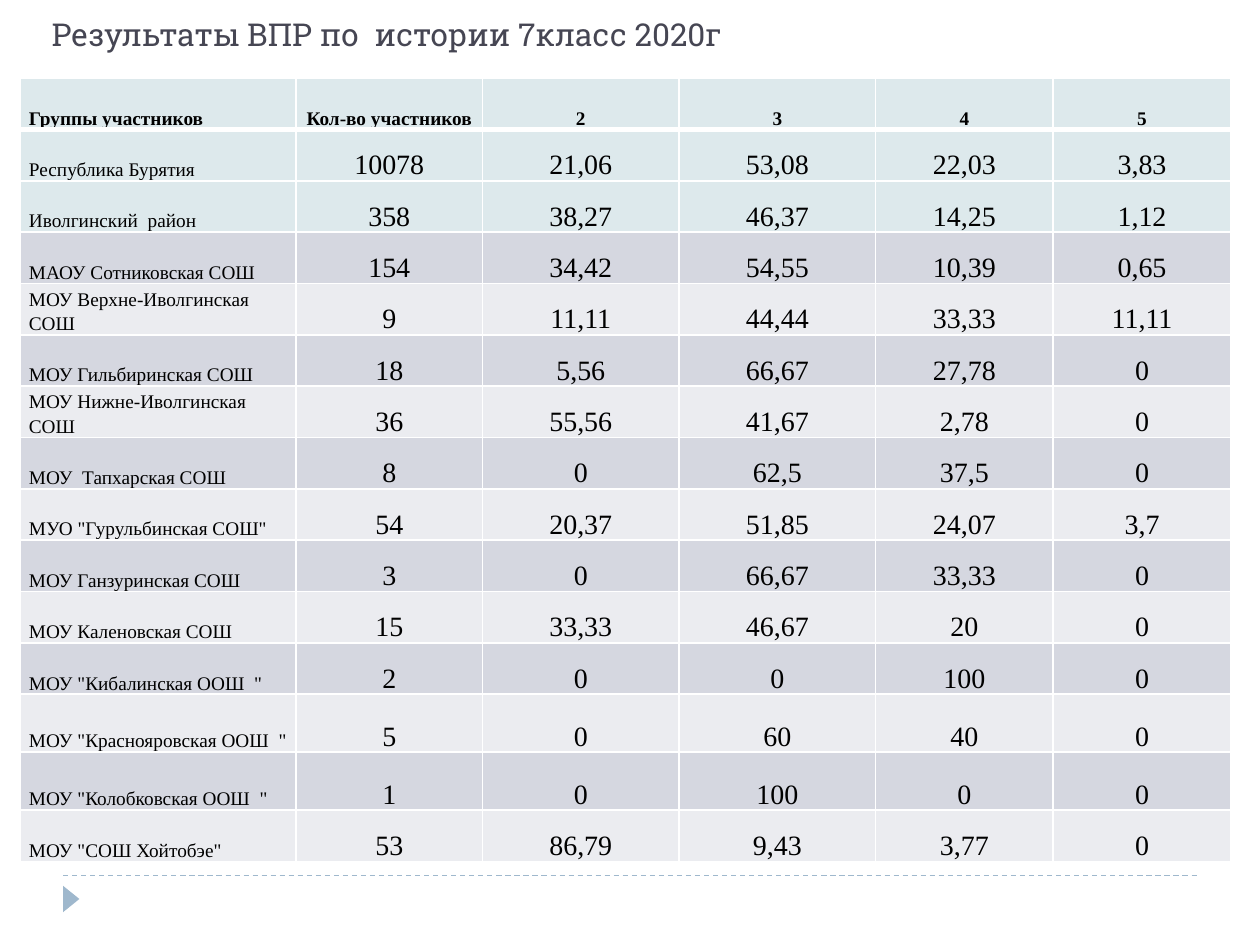
from typing import NamedTuple

from lxml.etree import SubElement
from pptx import Presentation
from pptx.dml.color import RGBColor
from pptx.enum.dml import MSO_LINE_DASH_STYLE as Dash
from pptx.enum.shapes import MSO_CONNECTOR, MSO_SHAPE
from pptx.enum.text import MSO_ANCHOR, PP_ALIGN
from pptx.oxml.ns import qn
from pptx.util import Inches, Pt

COLORS = {
    "title": "464653",
    "text": "000000",
    "accent": "9FB8CD",
    "border": "FFFFFF",
    "summary": "DDE9EC",
    "dark_band": "D5D7E0",
    "light_band": "EBECF0",
}
TABLE_FONT = "Times New Roman"
COLUMN_WIDTHS = [2.19, 1.48, 1.56, 1.56, 1.41, 1.41]
TABLE_HEIGHT = 6.22
TALL_ROWS = {12, 13}
TALL_HEIGHT = 0.46
SUMMARY_ROWS = 3  # heading, republic and district


class Result(NamedTuple):
    group: str
    participants: str
    mark_2: str
    mark_3: str
    mark_4: str
    mark_5: str


RESULTS = [
    Result("Группы участников", "Кол-во участников", "2", "3", "4", "5"),
    Result("Республика Бурятия", "10078", "21,06", "53,08", "22,03", "3,83"),
    Result("Иволгинский  район", "358", "38,27", "46,37", "14,25", "1,12"),
    Result("МАОУ Сотниковская СОШ", "154", "34,42", "54,55", "10,39", "0,65"),
    Result("МОУ Верхне-Иволгинская СОШ", "9", "11,11", "44,44", "33,33", "11,11"),
    Result("МОУ Гильбиринская СОШ", "18", "5,56", "66,67", "27,78", "0"),
    Result("МОУ Нижне-Иволгинская СОШ", "36", "55,56", "41,67", "2,78", "0"),
    Result("МОУ  Тапхарская СОШ", "8", "0", "62,5", "37,5", "0"),
    Result('МУО "Гурульбинская СОШ"', "54", "20,37", "51,85", "24,07", "3,7"),
    Result("МОУ Ганзуринская СОШ", "3", "0", "66,67", "33,33", "0"),
    Result("МОУ Каленовская СОШ", "15", "33,33", "46,67", "20", "0"),
    Result('МОУ "Кибалинская ООШ  "', "2", "0", "0", "100", "0"),
    Result('МОУ "Краснояровская ООШ  "', "5", "0", "60", "40", "0"),
    Result('МОУ "Колобковская ООШ  "', "1", "0", "100", "0", "0"),
    Result('МОУ "СОШ Хойтобэе"', "53", "86,79", "9,43", "3,77", "0"),
]


def rgb(name: str) -> RGBColor:
    return RGBColor.from_string(COLORS[name])


def write(frame, text: str, *, font=TABLE_FONT, size=11, color="text",
          bold=False, align=PP_ALIGN.LEFT, spacing=1.0) -> None:
    paragraph = frame.paragraphs[0]
    paragraph.alignment = align
    paragraph.line_spacing = spacing
    run = paragraph.add_run()
    run.text = text
    run.font.name = font
    run.font.size = Pt(size)
    run.font.bold = bold
    run.font.color.rgb = rgb(color)


def set_borders(cell, bottom: float, top: float) -> None:
    """Draw the four cell borders; they must precede the fill in the XML."""
    properties = cell._tc.get_or_add_tcPr()
    for side, width in (("L", 1), ("R", 1), ("T", top), ("B", bottom)):
        border = SubElement(properties, qn(f"a:ln{side}"), w=str(Pt(width)))
        fill = SubElement(border, qn("a:solidFill"))
        SubElement(fill, qn("a:srgbClr"), val=COLORS["border"])


def band_color(row: int) -> str:
    if row < SUMMARY_ROWS:
        return "summary"
    return "dark_band" if row % 2 else "light_band"


def fill_cell(cell, text: str, row: int, column: int) -> None:
    heading = row == 0
    cell.vertical_anchor = MSO_ANCHOR.BOTTOM
    cell.margin_left = cell.margin_right = Inches(0.07)
    cell.margin_top = cell.margin_bottom = 0
    set_borders(cell, bottom=3 if heading else 1, top=3 if row == 1 else 1)
    cell.fill.solid()
    cell.fill.fore_color.rgb = rgb(band_color(row))
    write(cell.text_frame, text, bold=heading, spacing=1.15,
          size=11 if heading or column == 0 else 16,
          align=PP_ALIGN.CENTER if column else PP_ALIGN.LEFT)


def add_results_table(slide, results: list[Result]) -> None:
    table = slide.shapes.add_table(
        len(results), len(COLUMN_WIDTHS), Inches(0.16), Inches(0.62),
        Inches(sum(COLUMN_WIDTHS)), Inches(TABLE_HEIGHT)).table
    for column, width in zip(table.columns, COLUMN_WIDTHS):
        column.width = Inches(width)
    usual_height = ((TABLE_HEIGHT - TALL_HEIGHT * len(TALL_ROWS))
                    / (len(results) - len(TALL_ROWS)))
    for row, result in enumerate(results):
        table.rows[row].height = Inches(
            TALL_HEIGHT if row in TALL_ROWS else usual_height)
        for column, text in enumerate(result):
            fill_cell(table.cell(row, column), text, row, column)


def add_footer_marks(slide) -> None:
    rule = slide.shapes.add_connector(
        MSO_CONNECTOR.STRAIGHT, Inches(0.5), Inches(6.95), Inches(9.5), Inches(6.95))
    rule.line.color.rgb = rgb("accent")
    rule.line.width = Pt(0.75)
    rule.line.dash_style = Dash.DASH
    SubElement(rule._element.spPr, qn("a:effectLst"))

    pointer = slide.shapes.add_shape(
        MSO_SHAPE.ISOSCELES_TRIANGLE, Inches(0.46), Inches(7.07),
        Inches(0.21), Inches(0.13))
    pointer.rotation = 90
    pointer.shadow.inherit = False
    pointer.fill.solid()
    pointer.fill.fore_color.rgb = rgb("accent")
    pointer.line.fill.background()


def add_title(slide, text: str) -> None:
    title = slide.shapes.title
    title.left, title.top = Inches(0.31), Inches(0.17)
    title.width, title.height = Inches(9.38), Inches(0.3)
    title.text_frame.vertical_anchor = MSO_ANCHOR.BOTTOM
    write(title.text_frame, text, font="Roboto Slab", size=18, color="title")


def main() -> None:
    presentation = Presentation()
    presentation.slide_width = Inches(10)
    presentation.slide_height = Inches(7.5)
    slide = presentation.slides.add_slide(presentation.slide_layouts[5])
    add_footer_marks(slide)
    add_title(slide, "Результаты ВПР по  истории 7класс 2020г")
    add_results_table(slide, RESULTS)
    presentation.save("out.pptx")


if __name__ == "__main__":
    main()
